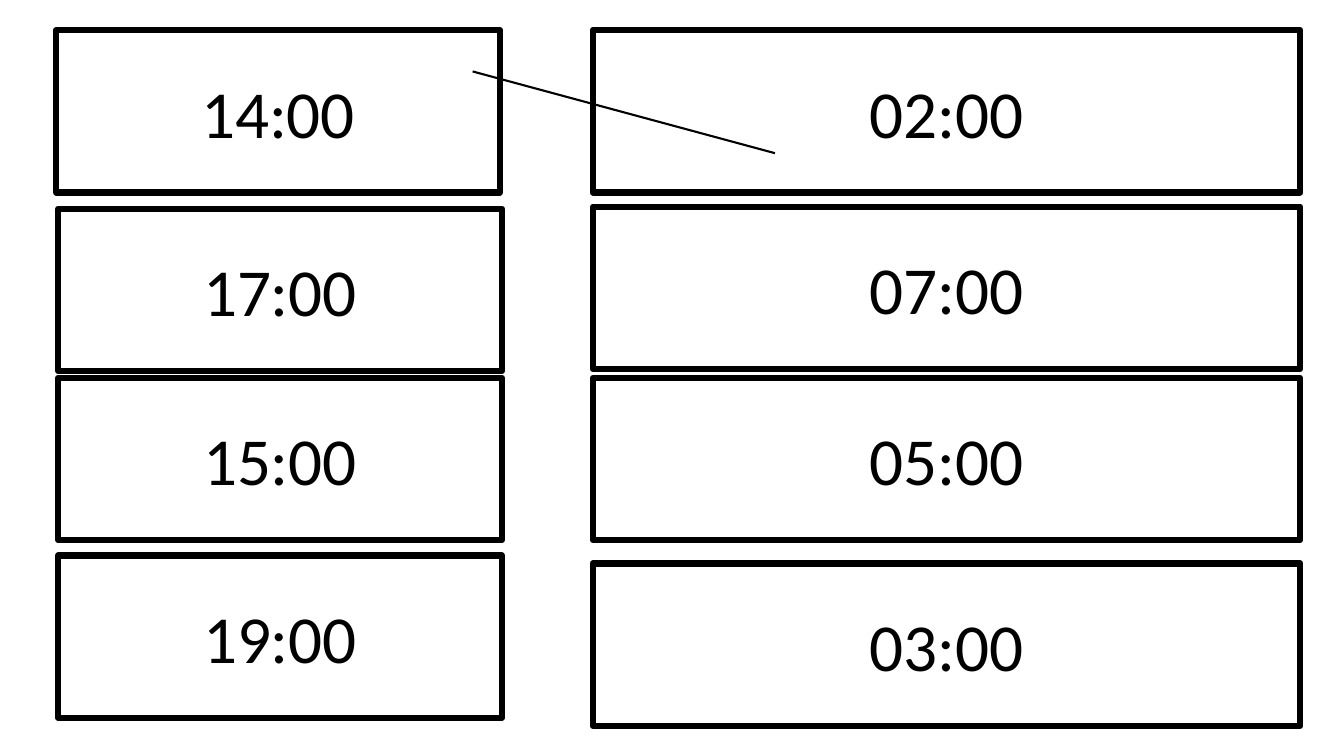
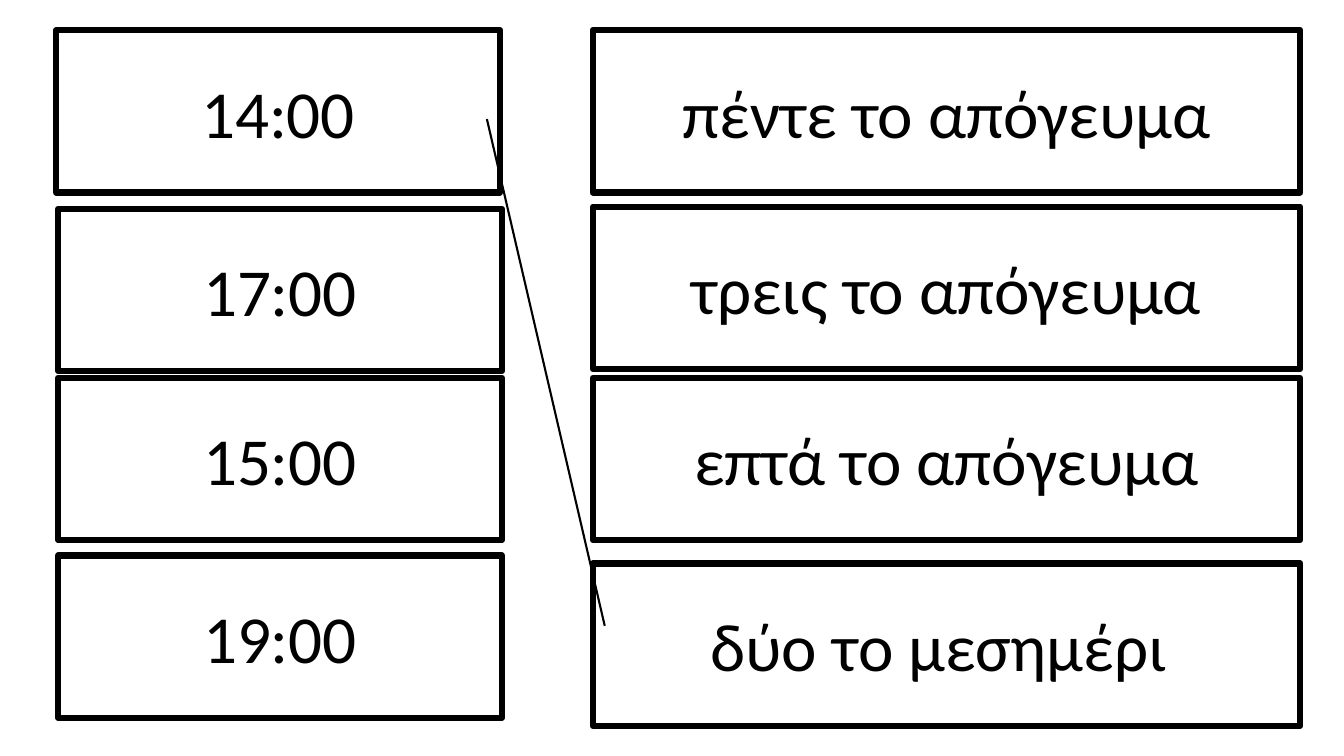
"""Build two slides for matching 24-hour times with their afternoon equivalents."""
from typing import NamedTuple

from lxml import etree
from pptx import Presentation
from pptx import util as u
from pptx.dml.color import RGBColor
from pptx.enum import shapes, text
from pptx.oxml.ns import qn
from pptx.slide import Slide

BLACK = RGBColor(0, 0, 0)
WHITE = RGBColor(255, 255, 255)
FONT = "Calibri"
HIGH = 4.09


class Spot(NamedTuple):
    left: float
    top: float


class Column(NamedTuple):
    wide: float
    spots: tuple[Spot, ...]


class Page(NamedTuple):
    answers: tuple[str, ...]
    start: Spot
    end: Spot


TIMES = ("14:00", "17:00", "15:00", "19:00")
LEFT = Column(11.18, (Spot(1.42, 0.76), Spot(1.47, 5.26),
                      Spot(1.47, 9.52), Spot(1.47, 14)))
RIGHT = Column(17.83, tuple(Spot(14.94, top) for top in (0.76, 5.21, 9.52, 14.2)))
PAGES = (
    Page(("02:00", "07:00", "05:00", "03:00"),
         Spot(11.91, 1.8), Spot(19.53, 3.86)),
    Page(("πέντε το απόγευμα", "τρεις το απόγευμα",
          "επτά το απόγευμα", "δύο το μεσημέρι "),
         Spot(12.27, 3), Spot(15.24, 15.77)),
)


def add_box(slide: Slide, spot: Spot, wide: float, label: str) -> None:
    box = slide.shapes.add_shape(
        shapes.MSO_SHAPE.RECTANGLE, u.Cm(spot.left), u.Cm(spot.top),
        u.Cm(wide), u.Cm(HIGH))
    box.shadow.inherit = False
    box.fill.solid()
    box.fill.fore_color.rgb = WHITE
    box.line.color.rgb = BLACK
    box.line.width = u.Pt(4.5)
    frame = box.text_frame
    frame.word_wrap = True
    frame.vertical_anchor = text.MSO_ANCHOR.MIDDLE
    para = frame.paragraphs[0]
    para.text = label
    para.alignment = text.PP_ALIGN.CENTER
    para.font.name = FONT
    para.font.size = u.Pt(48)
    para.font.color.rgb = BLACK


def add_column(slide: Slide, column: Column, labels: tuple[str, ...]) -> None:
    for spot, label in zip(column.spots, labels):
        add_box(slide, spot, column.wide, label)


def add_match(slide: Slide, start: Spot, end: Spot) -> None:
    match = slide.shapes.add_connector(
        shapes.MSO_CONNECTOR.STRAIGHT, u.Cm(start.left), u.Cm(start.top),
        u.Cm(end.left), u.Cm(end.top))
    match.line.color.rgb = BLACK
    match.line.width = u.Pt(1.5)
    etree.SubElement(match._element.spPr, qn("a:effectLst"))


def main() -> None:
    deck = Presentation()
    deck.slide_width = u.Cm(33.87)
    deck.slide_height = u.Cm(19.05)
    for page in PAGES:
        slide = deck.slides.add_slide(deck.slide_layouts[6])
        add_column(slide, LEFT, TIMES)
        add_column(slide, RIGHT, page.answers)
        add_match(slide, page.start, page.end)
    deck.save("out.pptx")


if __name__ == "__main__":
    main()
